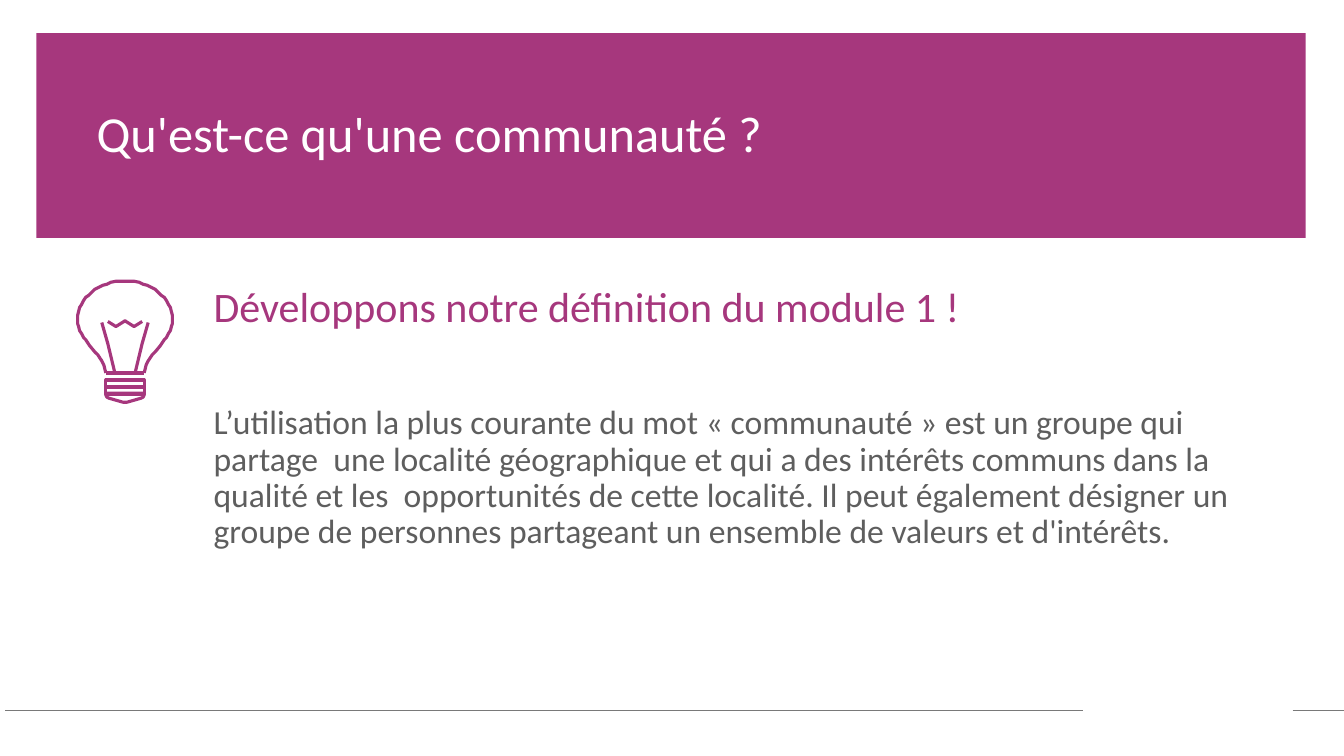
from dataclasses import dataclass

from lxml.etree import SubElement
from pptx import Presentation
from pptx.dml.color import RGBColor
from pptx.enum.shapes import MSO_CONNECTOR, MSO_SHAPE
from pptx.oxml.ns import qn
from pptx.util import Inches, Pt


@dataclass(frozen=True)
class Theme:
    font: str = "Calibri"
    accent: RGBColor = RGBColor(0xA6, 0x37, 0x7D)
    white: RGBColor = RGBColor(0xFF, 0xFF, 0xFF)
    body: RGBColor = RGBColor(0x5E, 0x5E, 0x5E)
    rule: RGBColor = RGBColor(0x79, 0x79, 0x79)
    title_size: float = 36
    heading_size: float = 30
    body_size: float = 24
    icon_line: float = 2.25
    rule_line: float = 0.5


THEME = Theme()
TITLE = "Qu'est-ce qu'une communauté ?"
HEADING = "Développons notre définition du module 1 !"
DEFINITION = (
    "L’utilisation la plus courante du mot « communauté » est un groupe qui "
    "partage  une localité géographique et qui a des intérêts communs dans la "
    "qualité et les  opportunités de cette localité. Il peut également désigner un "
    "groupe de personnes partageant un ensemble de valeurs et d'intérêts."
)

BULB_COLUMNS = 94
GLASS_HALF = [
    (19, 91), (20, 87), (21, 83), (23, 79), (25, 76), (27, 73), (30, 70), (35, 64),
    (37, 61), (39, 58), (41, 56), (43, 52), (45, 49), (46, 45), (47, 42), (47, 38),
    (47, 34), (46, 30), (45, 26), (43, 23), (41, 19), (39, 16), (36, 14), (33, 11),
    (30, 8), (26, 6), (22, 4), (18, 3), (14, 1), (9, 0), (5, 0), (0, 0),
]
TIP_HALF = [(19, 111), (19, 113), (18, 115), (16, 116), (2, 120), (0, 120)]
FILAMENT_HALF = [(17, 40), (9, 45), (1, 40), (0, 39)]
STEM = [(23, 41), (17, 62), (10, 91)]


def add_line(shapes, start, end, color, width):
    line = shapes.add_connector(MSO_CONNECTOR.STRAIGHT, *start, *end)
    line.line.color.rgb = color
    line.line.width = Pt(width)
    SubElement(line._element.spPr, qn("a:effectLst"))


def add_text(s, box, paragraphs):
    tf = s.shapes.add_textbox(*box).text_frame
    tf.word_wrap = True
    for i, (text, size, color, before) in enumerate(paragraphs):
        p = tf.add_paragraph() if i else tf.paragraphs[0]
        p.text = text
        p.line_spacing = 0.9
        p.space_before = Pt(before)
        p.font.name = THEME.font
        p.font.size = Pt(size)
        p.font.color.rgb = color


def add_banner(s, box):
    left, top, width, height = box
    sp = s.shapes.add_shape(MSO_SHAPE.RECTANGLE, *box)
    sp.shadow.inherit = False
    sp.fill.solid()
    sp.fill.fore_color.rgb = THEME.accent
    sp.line.fill.background()
    title_box = (left + Inches(0.5), top + Inches(0.7), width - Inches(1.04), Inches(0.76))
    add_text(s, title_box, [(TITLE, THEME.title_size, THEME.white, 0)])


def add_content(s, box):
    add_text(s, box, [
        (HEADING, THEME.heading_size, THEME.accent, 0),
        (DEFINITION, THEME.body_size, THEME.body, 53),
    ])


def mirrored(half):
    return half + [(-x, y) for x, y in reversed(half[:-1])]


def add_bulb(s, left, top, width):
    shapes = s.shapes.add_group_shape().shapes
    unit = width / BULB_COLUMNS
    center = left + width // 2

    def outline(points, closed=False):
        builder = shapes.build_freeform(*points[0], scale=unit)
        builder.add_line_segments(points[1:], close=closed)
        sp = builder.convert_to_shape(center, top)
        sp.shadow.inherit = False
        sp.fill.background()
        sp.line.color.rgb = THEME.accent
        sp.line.width = Pt(THEME.icon_line)

    for y in (98, 105):
        outline([(-19, y), (19, y), (19, y + 7), (-19, y + 7)], True)
    outline(mirrored(TIP_HALF), True)
    outline(mirrored(GLASS_HALF))
    outline(mirrored(FILAMENT_HALF))
    for side in (-1, 1):
        outline([(side * x, y) for x, y in STEM])
    y, reach = top + int(91 * unit), int(19 * unit)
    add_line(shapes, (center - reach, y), (center + reach, y), THEME.accent, THEME.icon_line)


def add_footer(s, y, spans):
    for start, end in spans:
        add_line(s.shapes, (start, y), (end, y), THEME.rule, THEME.rule_line)


def main():
    prs = Presentation()
    prs.slide_width, prs.slide_height = Inches(13.33), Inches(7.5)
    s = prs.slides.add_slide(prs.slide_layouts[6])
    add_banner(s, (Inches(0.36), Inches(0.33), Inches(12.59), Inches(2.03)))
    add_footer(s, Inches(7.05), [
        (Inches(0.05), Inches(10.74)),
        (Inches(12.82), prs.slide_width),
    ])
    add_content(s, (Inches(2.02), Inches(2.79), Inches(10.39), Inches(3.55)))
    add_bulb(s, Inches(0.77), Inches(2.79), Inches(0.94))
    prs.save("out.pptx")


if __name__ == "__main__":
    main()
